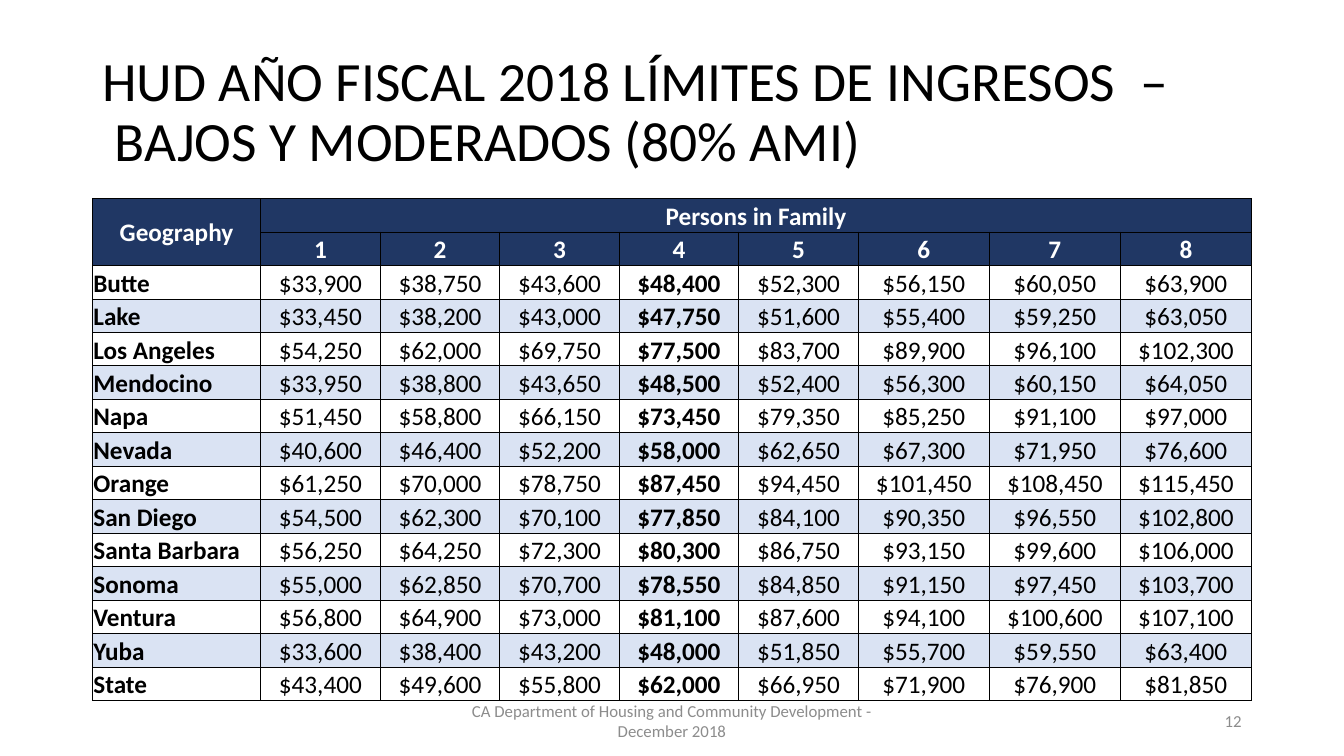
from dataclasses import dataclass

from lxml import etree
from pptx import Presentation
from pptx import util as u
from pptx.dml import color
from pptx.enum import text
from pptx.oxml import ns


@dataclass(frozen=True)
class Theme:
    font: str = "Calibri"
    ink: str = "000000"
    header_ink: str = "FFFFFF"
    header_fill: str = "203764"
    band_fill: str = "DAE3F3"
    footer_ink: str = "8C8C8C"
    title_size: float = 39.6
    table_size: float = 18
    footer_size: float = 12
    border: float = 0.5


THEME = Theme()
LEFT, CENTER, RIGHT = text.PP_ALIGN.LEFT, text.PP_ALIGN.CENTER, text.PP_ALIGN.RIGHT
MIDDLE, BOTTOM = text.MSO_ANCHOR.MIDDLE, text.MSO_ANCHOR.BOTTOM
COLUMN_WIDTHS = [120.2] + [85.4] * 5 + [93.6] * 3
HEADER_ROWS = 2
FAMILY_SIZES = range(1, 9)
BOLD_COLUMNS = (0, 4)
INCOME_LIMITS = [
    ("Butte", 33900, 38750, 43600, 48400, 52300, 56150, 60050, 63900),
    ("Lake", 33450, 38200, 43000, 47750, 51600, 55400, 59250, 63050),
    ("Los Angeles", 54250, 62000, 69750, 77500, 83700, 89900, 96100, 102300),
    ("Mendocino", 33950, 38800, 43650, 48500, 52400, 56300, 60150, 64050),
    ("Napa", 51450, 58800, 66150, 73450, 79350, 85250, 91100, 97000),
    ("Nevada", 40600, 46400, 52200, 58000, 62650, 67300, 71950, 76600),
    ("Orange", 61250, 70000, 78750, 87450, 94450, 101450, 108450, 115450),
    ("San Diego", 54500, 62300, 70100, 77850, 84100, 90350, 96550, 102800),
    ("Santa Barbara", 56250, 64250, 72300, 80300, 86750, 93150, 99600, 106000),
    ("Sonoma", 55000, 62850, 70700, 78550, 84850, 91150, 97450, 103700),
    ("Ventura", 56800, 64900, 73000, 81100, 87600, 94100, 100600, 107100),
    ("Yuba", 33600, 38400, 43200, 48000, 51850, 55700, 59550, 63400),
    ("State", 43400, 49600, 55800, 62000, 66950, 71900, 76900, 81850),
]


def write_paragraph(paragraph, words, size, ink, align, bold=False):
    paragraph.text = words
    paragraph.alignment = align
    for run in paragraph.runs:
        run.font.name = THEME.font
        run.font.size = u.Pt(size)
        run.font.bold = bold
        run.font.color.rgb = color.RGBColor.from_string(ink)


def add_label(slide, box, words, size, ink, align):
    shape = slide.shapes.add_textbox(*map(u.Pt, box))
    frame = shape.text_frame
    frame.word_wrap = True
    frame.vertical_anchor = MIDDLE
    write_paragraph(frame.paragraphs[0], words, size, ink, align)
    return frame.paragraphs[0]


def add_title(slide, box):
    words = "HUD AÑO FISCAL 2018 LÍMITES DE INGRESOS  –\v BAJOS Y MODERADOS (80% AMI)"
    paragraph = add_label(slide, box, words, THEME.title_size, THEME.ink, LEFT)
    paragraph.line_spacing = 0.9


def add_borders(cell):
    properties = cell._tc.get_or_add_tcPr()
    for side in ("lnL", "lnR", "lnT", "lnB"):
        line = etree.SubElement(properties, ns.qn(f"a:{side}"), w=str(u.Pt(THEME.border)))
        fill = etree.SubElement(line, ns.qn("a:solidFill"))
        etree.SubElement(fill, ns.qn("a:srgbClr"), val=THEME.ink)


def style_cell(cell, fill):
    cell.margin_left = cell.margin_right = cell.margin_top = u.Pt(0.72)
    cell.margin_bottom = 0
    cell.vertical_anchor = BOTTOM
    add_borders(cell)
    if fill:
        cell.fill.solid()
        cell.fill.fore_color.rgb = color.RGBColor.from_string(fill)
    else:
        cell.fill.background()


def fill_header(table):
    geography, persons = table.cell(0, 0), table.cell(0, 1)
    labels = [(geography, "Geography"), (persons, "Persons in Family")]
    labels += [(table.cell(1, size), str(size)) for size in FAMILY_SIZES]
    for row in range(HEADER_ROWS):
        for column in range(len(COLUMN_WIDTHS)):
            style_cell(table.cell(row, column), THEME.header_fill)
    for cell, words in labels:
        write_paragraph(cell.text_frame.paragraphs[0], words, THEME.table_size,
                        THEME.header_ink, CENTER, True)
    geography.vertical_anchor = MIDDLE
    geography.merge(table.cell(1, 0))
    persons.merge(table.cell(0, len(COLUMN_WIDTHS) - 1))


def fill_body(table):
    for index, record in enumerate(INCOME_LIMITS):
        for column, value in enumerate(record):
            cell = table.cell(index + HEADER_ROWS, column)
            style_cell(cell, THEME.band_fill if index % 2 else None)
            words = f"${value:,}" if column else value
            write_paragraph(cell.text_frame.paragraphs[0], words, THEME.table_size,
                            THEME.ink, CENTER if column else LEFT, column in BOLD_COLUMNS)


def add_income_table(slide, box):
    row_count = HEADER_ROWS + len(INCOME_LIMITS)
    frame = slide.shapes.add_table(row_count, len(COLUMN_WIDTHS), *map(u.Pt, box))
    table = frame.table
    for column, width in zip(table.columns, COLUMN_WIDTHS):
        column.width = u.Pt(width)
    for row in table.rows:
        row.height = u.Pt(box[3] / row_count)
    fill_header(table)
    fill_body(table)


def add_footer(slide, box):
    left, top, width, height = box
    source_width, number_width = 324, 216
    source_box = (left + (width - source_width) / 2, top, source_width, height)
    number_box = (left + width - number_width, top, number_width, height)
    add_label(slide, source_box,
              "CA Department of Housing and Community Development - December 2018",
              THEME.footer_size, THEME.footer_ink, CENTER)
    add_label(slide, number_box, "12", THEME.footer_size, THEME.footer_ink, RIGHT)


def main():
    presentation = Presentation()
    presentation.slide_width, presentation.slide_height = u.Pt(960), u.Pt(540)
    slide = presentation.slides.add_slide(presentation.slide_layouts[6])
    left, width = 66, 828
    add_title(slide, (left, 28.75, width, 104.4))
    add_income_table(slide, (left, 141.8, width, 358.5))
    add_footer(slide, (left, 500.5, width, 28.75))
    presentation.save("out.pptx")


if __name__ == "__main__":
    main()
